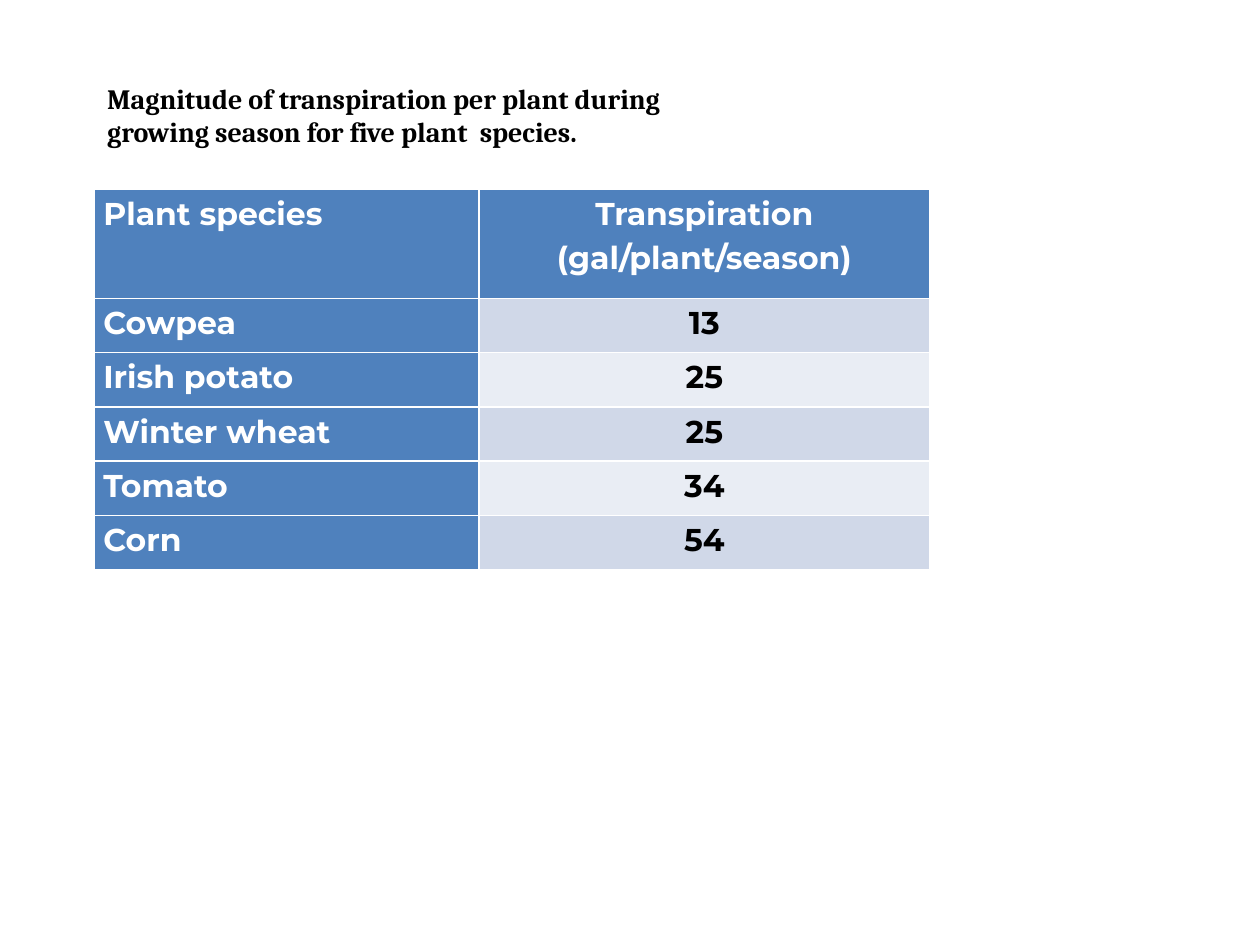
"""Build a slide with a table of transpiration per plant for five species."""
from dataclasses import dataclass

from pptx import Presentation
from pptx.dml.color import RGBColor
from pptx.enum.text import MSO_ANCHOR, MSO_AUTO_SIZE, PP_ALIGN
from pptx.table import _Cell
from pptx.util import Inches, Pt

COLORS = {
    "head": "4F81BD",
    "odd": "D0D8E8",
    "even": "E9EDF4",
    "light": "FFFFFF",
    "dark": "000000",
}
LEFT = 0.75
TITLE = (
    "Magnitude of transpiration per plant during",
    "growing season for five plant  species.",
)
WIDTHS = (3.05, 3.58)
HEAD_ROW, BODY_ROW = 0.87, 0.43


@dataclass
class Entry:
    plant: str
    amount: str


HEAD = Entry("Plant species", "Transpiration (gal/plant/season)")
ENTRIES = [
    Entry("Cowpea", "13"),
    Entry("Irish potato", "25"),
    Entry("Winter wheat", "25"),
    Entry("Tomato", "34"),
    Entry("Corn", "54"),
]


def color(name: str) -> RGBColor:
    return RGBColor.from_string(COLORS[name])


def style(para, font: str, size: int, ink: str, align: PP_ALIGN) -> None:
    para.alignment = align
    para.font.name = font
    para.font.size = Pt(size)
    para.font.bold = True
    para.font.color.rgb = color(ink)


def fill_cell(cell: _Cell, text: str, fill: str, ink: str, align: PP_ALIGN) -> None:
    cell.margin_left = cell.margin_right = Inches(0.07)
    cell.margin_top = cell.margin_bottom = 0
    cell.fill.solid()
    cell.fill.fore_color.rgb = color(fill)
    cell.text = text
    para = cell.text_frame.paragraphs[0]
    para.line_spacing = 1.15
    style(para, "Montserrat", 18, ink, align)


def add_title(slide) -> None:
    title = slide.shapes.title
    title.left, title.top = Inches(LEFT), Inches(0.59)
    title.width, title.height = Inches(6.5), Inches(0.64)
    frame = title.text_frame
    frame.text = "\n".join(TITLE)
    frame.word_wrap = True
    frame.auto_size = MSO_AUTO_SIZE.SHAPE_TO_FIT_TEXT
    frame.vertical_anchor = MSO_ANCHOR.MIDDLE
    for para in frame.paragraphs:
        style(para, "Cambria", 16, "dark", PP_ALIGN.LEFT)


def add_grid(slide) -> None:
    rows = [HEAD, *ENTRIES]
    heights = [HEAD_ROW] + [BODY_ROW] * len(ENTRIES)
    table = slide.shapes.add_table(
        len(rows), len(WIDTHS), Inches(LEFT), Inches(1.5),
        Inches(sum(WIDTHS)), Inches(sum(heights)),
    ).table
    table.first_col = True
    for column, width in zip(table.columns, WIDTHS):
        column.width = Inches(width)
    for index, (entry, height) in enumerate(zip(rows, heights)):
        table.rows[index].height = Inches(height)
        band = "odd" if index % 2 else "even"
        fill, ink = (band, "dark") if index else ("head", "light")
        fill_cell(table.cell(index, 0), entry.plant, "head", "light", PP_ALIGN.JUSTIFY)
        fill_cell(table.cell(index, 1), entry.amount, fill, ink, PP_ALIGN.CENTER)


def main() -> None:
    deck = Presentation()
    deck.slide_width, deck.slide_height = Inches(10), Inches(7.5)
    slide = deck.slides.add_slide(deck.slide_layouts.get_by_name("Title Only"))
    add_title(slide)
    add_grid(slide)
    deck.save("out.pptx")


if __name__ == "__main__":
    main()
